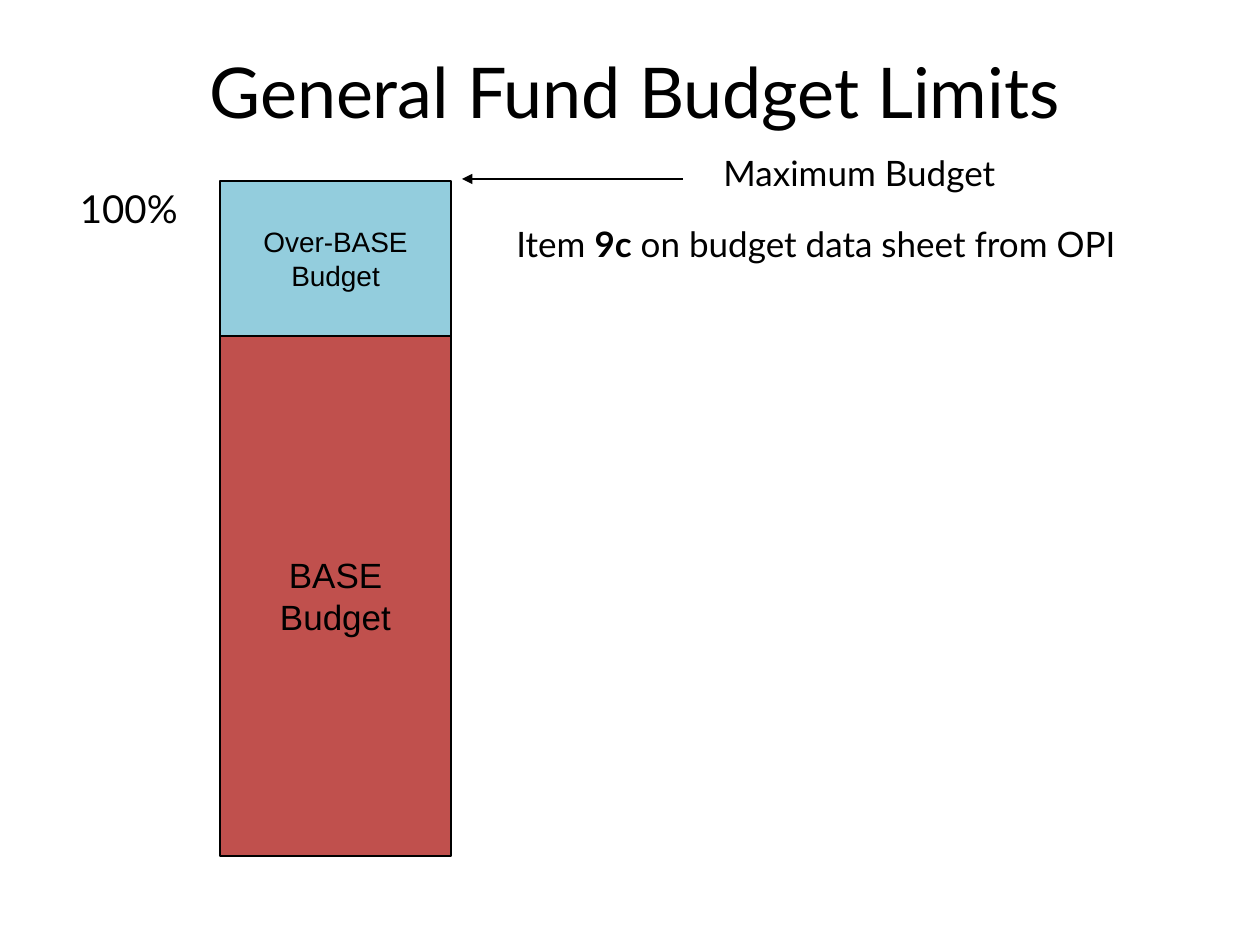
from pptx import Presentation
from pptx import util as u
from pptx.dml.color import RGBColor
from pptx.enum import shapes, text
from pptx.oxml.ns import qn
from lxml import etree

PX = 914400 // 126
BLACK = "000000"


def px(length):
    return u.Emu(length * PX)


def color(hex_value):
    return RGBColor.from_string(hex_value)


class BudgetSlide:
    """Holds the style and the slide being filled."""
    text_font = "Lato"
    bar_font = "Arial"
    line_width = u.Pt(0.75)

    def __init__(self, deck):
        self.page = deck.slides.add_slide(deck.slide_layouts[5])

    def set_words(self, box, spans, size, font, align, anchor):
        """Fill a shape with one paragraph of (words, bold) spans."""
        frame = box.text_frame
        frame.word_wrap = True
        frame.auto_size = text.MSO_AUTO_SIZE.NONE
        frame.vertical_anchor = anchor
        para = frame.paragraphs[0]
        para.alignment = align
        for words, bold in spans:
            span = para.add_run()
            span.text = words
            span.font.name = font
            span.font.size = u.Pt(size)
            span.font.bold = bold
            span.font.color.rgb = color(BLACK)

    def title(self, words, left, top, width, height):
        box = self.page.shapes.title
        box.left, box.top = px(left), px(top)
        box.width, box.height = px(width), px(height)
        self.set_words(box, [(words, False)], 40, self.text_font,
                       text.PP_ALIGN.CENTER, text.MSO_ANCHOR.TOP)

    def label(self, spans, left, top, width, height, size=20,
              align=text.PP_ALIGN.LEFT):
        box = self.page.shapes.add_textbox(
            px(left), px(top), px(width), px(height))
        self.set_words(box, spans, size, self.text_font, align,
                       text.MSO_ANCHOR.TOP)

    def bar(self, words, left, top, width, height, fill, size):
        box = self.page.shapes.add_shape(
            shapes.MSO_SHAPE.RECTANGLE,
            px(left), px(top), px(width), px(height))
        box.shadow.inherit = False
        box.fill.solid()
        box.fill.fore_color.rgb = color(fill)
        box.line.color.rgb = color(BLACK)
        box.line.width = self.line_width
        self.set_words(box, [(words, False)], size, self.bar_font,
                       text.PP_ALIGN.CENTER, text.MSO_ANCHOR.MIDDLE)

    def arrow(self, start_x, end_x, y):
        arrow = self.page.shapes.add_connector(
            shapes.MSO_CONNECTOR.STRAIGHT,
            px(start_x), px(y), px(end_x), px(y))
        arrow.line.color.rgb = color(BLACK)
        arrow.line.width = self.line_width
        properties = arrow._element.spPr
        etree.SubElement(properties.find(qn("a:ln")), qn("a:tailEnd"),
                         type="triangle")
        etree.SubElement(properties, qn("a:effectLst"))


def main():
    deck = Presentation()
    deck.slide_width, deck.slide_height = px(1260), px(945)
    slide = BudgetSlide(deck)

    slide.title("General Fund Budget Limits", 31, 42, 1207, 97)

    bar_left, bar_width = 220, 231
    bar_top, split, bar_bottom = 181, 336, 856
    slide.bar("BASE Budget", bar_left, split, bar_width, bar_bottom - split,
              "C0504D", 20)
    slide.bar("Over-BASE Budget", bar_left, bar_top, bar_width,
              split - bar_top, "93CDDD", 16)

    slide.label([("100%", False)], 56, 179, 134, 59, 22,
                text.PP_ALIGN.RIGHT)
    slide.label([("Maximum Budget", False)], 711, 145, 325, 55)
    slide.label([("Item ", False), ("9c", True),
                 (" on budget data sheet from OPI", False)],
                504, 216, 662, 55)
    slide.arrow(683, 462, 179)

    deck.save("out.pptx")


if __name__ == "__main__":
    main()
